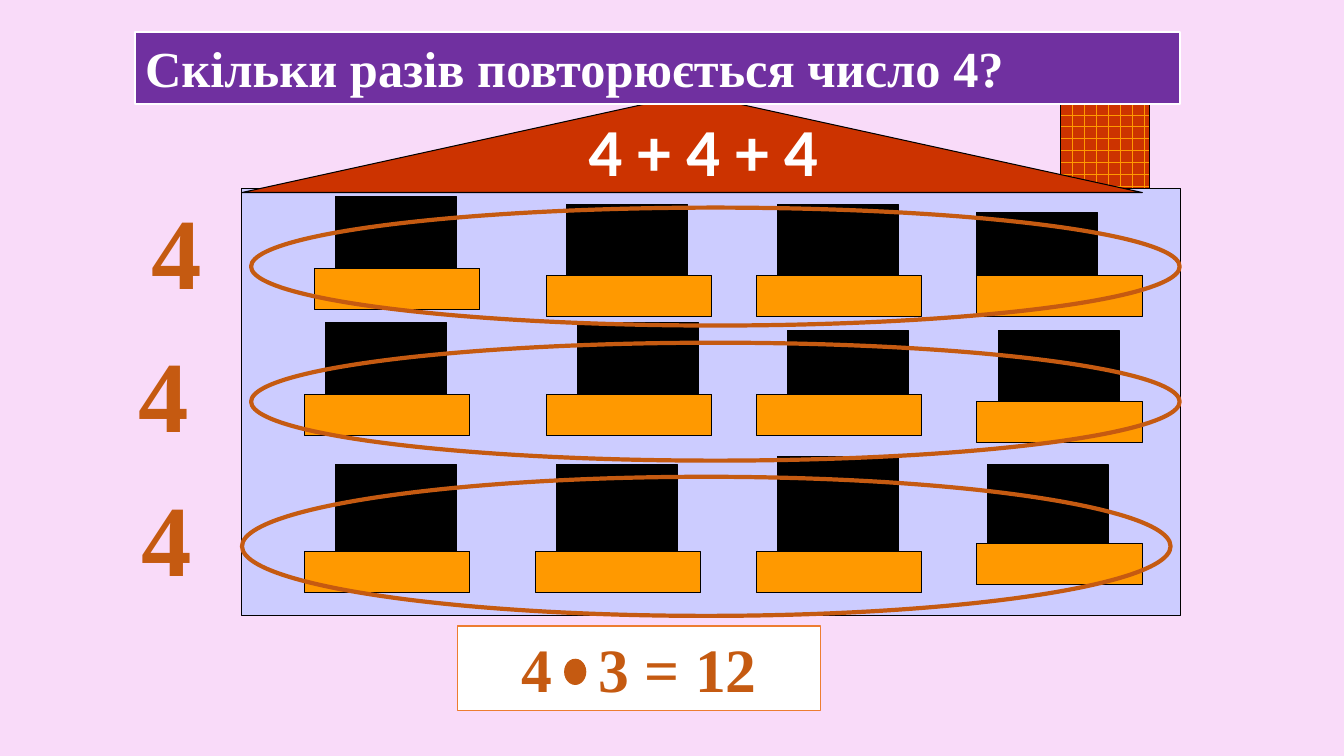
from pptx import Presentation
from pptx.dml.color import RGBColor
from pptx.enum.dml import MSO_PATTERN
from pptx.enum.shapes import MSO_SHAPE
from pptx.enum.text import MSO_ANCHOR, MSO_AUTO_SIZE, PP_ALIGN
from pptx.util import Inches, Pt

RECTANGLE = MSO_SHAPE.RECTANGLE
TRIANGLE = MSO_SHAPE.ISOSCELES_TRIANGLE
OVAL = MSO_SHAPE.OVAL
BRICKS = MSO_PATTERN.HORIZONTAL_BRICK
STRIPES = MSO_PATTERN.DARK_HORIZONTAL
TOP = MSO_ANCHOR.TOP
GROW = MSO_AUTO_SIZE.SHAPE_TO_FIT_TEXT
LEFT = PP_ALIGN.LEFT
CENTER = PP_ALIGN.CENTER

COLORS = {
    "background": "F9DBF9",
    "wall": "CCCCFF",
    "roof": "CC3300",
    "brim": "FF9900",
    "black": "000000",
    "white": "FFFFFF",
    "accent": "C55A11",
    "title": "7030A0",
    "answer_border": "ED7D31",
}

CROWN_WIDTH = 1.2
BRIM_WIDTH, BRIM_HEIGHT = 1.64, 0.41

CROWNS = [
    (3.33, 1.95, 0.99), (5.62, 2.03, 0.91), (7.71, 2.03, 0.83), (9.69, 2.11, 0.91),
    (3.23, 3.2, 0.99), (5.73, 3.2, 0.91), (7.81, 3.28, 0.83), (9.9, 3.28, 0.75),
    (3.33, 4.61, 0.99), (5.52, 4.61, 0.99), (7.71, 4.53, 0.99), (9.79, 4.61, 0.99),
]
BRIMS = [
    (3.12, 2.66), (5.42, 2.73), (7.5, 2.73), (9.69, 2.73),
    (3.02, 3.91), (5.42, 3.91), (7.5, 3.91), (9.69, 3.98),
    (3.02, 5.47), (5.31, 5.47), (7.5, 5.47), (9.69, 5.39),
]
ROW_COUNTS = [(1.25, 1.82, 1, 1.3), (1.12, 3.24, 1.01, 1.3), (1.12, 4.67, 1.06, 1.3)]
ROW_RINGS = [(2.49, 3.4, 9.21, 1.17), (2.49, 2.06, 9.21, 1.17), (2.4, 4.73, 9.21, 1.38)]


def rgb(name):
    return RGBColor.from_string(COLORS[name])


def add_figure(slide, kind, box, fill=None, pattern=None, line="black", line_width=0.75):
    shape = slide.shapes.add_shape(kind, *map(Inches, box))
    shape.shadow.inherit = False
    if pattern is not None:
        shape.fill.patterned()
        shape.fill.pattern = pattern
        shape.fill.fore_color.rgb = rgb("brim")
        shape.fill.back_color.rgb = rgb("roof")
    elif fill:
        shape.fill.solid()
        shape.fill.fore_color.rgb = rgb(fill)
    else:
        shape.fill.background()
    shape.line.color.rgb = rgb(line)
    shape.line.width = Pt(line_width)
    return shape


def write_text(shape, *texts, size, color, font="Times New Roman", align=CENTER):
    frame = shape.text_frame
    frame.word_wrap = True
    frame.auto_size = GROW
    frame.vertical_anchor = TOP
    paragraph = frame.paragraphs[0]
    paragraph.alignment = align
    for text in texts:
        run = paragraph.add_run()
        run.text = text
        run.font.size = Pt(size)
        run.font.name = font
        run.font.bold = True
        run.font.color.rgb = rgb(color)
    return paragraph


def add_label(slide, box, text, **text_format):
    write_text(slide.shapes.add_textbox(*map(Inches, box)), text, **text_format)


def add_house(slide):
    add_figure(slide, RECTANGLE, (10.52, 1.02, 0.88, 0.98), pattern=BRICKS)
    add_figure(slide, RECTANGLE, (2.4, 1.87, 9.31, 4.24), fill="wall")
    add_figure(slide, TRIANGLE, (2.4, 0.93, 8.93, 0.98), fill="roof")


def add_hats(slide):
    for left, top, height in CROWNS:
        add_figure(slide, RECTANGLE, (left, top, CROWN_WIDTH, height), fill="black")
    for left, top in BRIMS:
        add_figure(slide, RECTANGLE, (left, top, BRIM_WIDTH, BRIM_HEIGHT), pattern=STRIPES)


def add_rows(slide):
    for box in ROW_COUNTS:
        add_label(slide, box, "4", size=72, color="accent")
    for box in ROW_RINGS:
        add_figure(slide, OVAL, box, line="accent", line_width=3)


def add_title(slide):
    banner = add_figure(slide, RECTANGLE, (1.34, 0.32, 10.36, 0.71),
                        fill="title", line="white", line_width=1.5)
    write_text(banner, "Скільки разів повторюється число 4?",
               size=36, color="white", align=LEFT)


def add_answer(slide):
    panel = add_figure(slide, RECTANGLE, (4.54, 6.21, 3.6, 0.84),
                       fill="white", line="answer_border", line_width=1)
    paragraph = write_text(panel, "4", " ", "3 = 12", size=44, color="accent")
    paragraph.runs[1].font._element.set("spc", "2200")
    add_figure(slide, OVAL, (5.6, 6.54, 0.21, 0.25), fill="accent", line="accent")


def main():
    presentation = Presentation()
    presentation.slide_width = Inches(13.33)
    presentation.slide_height = Inches(7.5)
    slide = presentation.slides.add_slide(presentation.slide_layouts[6])
    slide.background.fill.solid()
    slide.background.fill.fore_color.rgb = rgb("background")
    add_house(slide)
    add_hats(slide)
    add_rows(slide)
    add_title(slide)
    add_answer(slide)
    add_label(slide, (4.35, 1.04, 5.25, 0.91), "4 + 4 + 4",
              size=48, color="white", font="Calibri")
    presentation.save("out.pptx")


if __name__ == "__main__":
    main()
